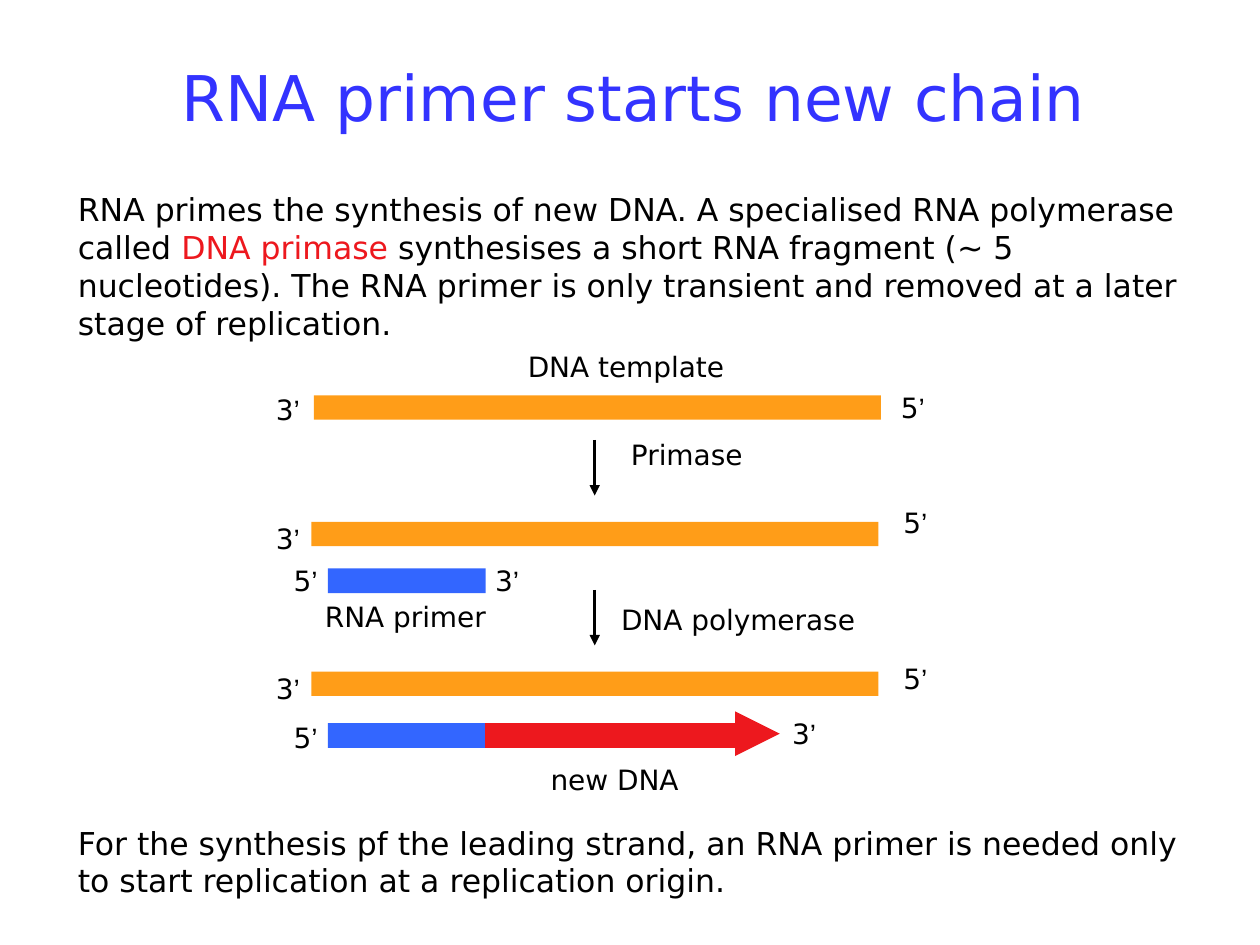
from dataclasses import dataclass

from lxml import etree
from pptx import Presentation
from pptx.dml.color import RGBColor
from pptx.enum.shapes import MSO_CONNECTOR, MSO_SHAPE
from pptx.enum.text import MSO_ANCHOR, MSO_AUTO_SIZE, PP_ALIGN
from pptx.oxml.ns import qn
from pptx.util import Cm, Pt

LINE = MSO_CONNECTOR.STRAIGHT
RECT = MSO_SHAPE.RECTANGLE
TOP, MID = MSO_ANCHOR.TOP, MSO_ANCHOR.MIDDLE
LEFT, CENTER = PP_ALIGN.LEFT, PP_ALIGN.CENTER
FIT, FIXED = MSO_AUTO_SIZE.SHAPE_TO_FIT_TEXT, MSO_AUTO_SIZE.NONE


@dataclass(frozen=True)
class Theme:
    """Colours, fonts and type sizes of the slide."""
    ink: str = "000000"
    title: str = "3333FF"
    dna: str = "FF9D18"
    rna: str = "3366FF"
    new: str = "ED181E"
    font: str = "DejaVu Sans"
    mark: str = "Arial"
    head: int = 36
    body: int = 18
    label: int = 16


THEME = Theme()


def add_text(shapes, box, *runs, size=THEME.label, color=THEME.ink,
             align=LEFT, anchor=TOP, wrap=False, fit=FIT):
    """Add a text box; a run is a string or a (string, format) pair."""
    frame = shapes.add_textbox(*map(Cm, box)).text_frame
    frame.word_wrap = wrap
    frame.auto_size = fit
    frame.vertical_anchor = anchor
    para = frame.paragraphs[0]
    para.alignment = align
    for item in runs:
        words, form = (item, {}) if isinstance(item, str) else item
        run = para.add_run()
        run.text = words
        run.font.size = Pt(size)
        run.font.name = form.get("font", THEME.font)
        run.font.color.rgb = RGBColor.from_string(form.get("color", color))


def add_bar(shapes, box, color):
    """Add a plain strand of one colour."""
    bar = shapes.add_shape(RECT, *map(Cm, box))
    bar.shadow.inherit = False
    bar.fill.solid()
    bar.fill.fore_color.rgb = RGBColor.from_string(color)
    bar.line.fill.background()


def add_arrow(shapes, start, end, color=THEME.ink, width=1.5):
    """Add a line with a triangle at its end."""
    arrow = shapes.add_connector(LINE, *map(Cm, start + end))
    arrow.line.color.rgb = RGBColor.from_string(color)
    arrow.line.width = Pt(width)
    etree.SubElement(arrow.line._get_or_add_ln(), qn("a:tailEnd"), type="triangle")
    etree.SubElement(arrow._element.spPr, qn("a:effectLst"))


def add_ends(shapes, x, y, ends):
    """Mark strand ends given as (digit, x, y) offsets."""
    for digit, dx, dy in ends:
        add_text(shapes, (x + dx, y + dy, 1.02, 0.94),
                 digit, ("’", {"font": THEME.mark}))


def add_step(shapes, x, y, name, width, dx, dy):
    """Add the enzyme arrow and its name."""
    add_arrow(shapes, (x + 6.68, y), (x + 6.68, y + 1.12))
    add_text(shapes, (x + dx, y + dy, width, 0.94), name)


def draw_strand(shapes, x, y):
    """Draw the bare DNA template."""
    add_bar(shapes, (x + 1.02, y + 1.04, 11.43, 0.49), THEME.dna)
    add_ends(shapes, x, y, [("3", 0, 0.86), ("5", 12.6, 0.81)])
    add_text(shapes, (x + 5.08, y, 4.47, 0.94), "DNA template")


def draw_prime(shapes, x, y):
    """Draw the template with its RNA primer."""
    add_step(shapes, x, y + 0.18, "Primase", 2.77, 7.16, -0.18)
    add_bar(shapes, (x + 0.97, y + 1.83, 11.43, 0.49), THEME.dna)
    add_bar(shapes, (x + 1.3, y + 2.77, 3.18, 0.5), THEME.rna)
    add_text(shapes, (x + 0.99, y + 3.28, 3.78, 0.94), "RNA primer")
    add_ends(shapes, x, y, [("3", 0, 1.7), ("3", 4.42, 2.54),
                            ("5", 12.65, 1.37), ("5", 0.36, 2.54)])


def draw_grow(shapes, x, y):
    """Draw the primer as it is extended by new DNA."""
    add_step(shapes, x, y, "DNA polymerase", 5.23, 6.96, 0.13)
    add_bar(shapes, (x + 0.97, y + 1.65, 11.43, 0.49), THEME.dna)
    add_bar(shapes, (x + 1.3, y + 2.69, 3.18, 0.5), THEME.rna)
    add_bar(shapes, (x + 4.47, y + 2.69, 5.18, 0.5), THEME.new)
    add_arrow(shapes, (x + 8.92, y + 2.9), (x + 10.41, y + 2.9), THEME.new, 8.5)
    add_ends(shapes, x, y, [("3", 0, 1.52), ("3", 10.41, 2.44),
                            ("5", 12.65, 1.32), ("5", 0.36, 2.51)])
    add_text(shapes, (x + 5.54, y + 3.35, 3.1, 0.94), "new DNA")


def draw_title(shapes, box):
    """Place the slide title."""
    add_text(shapes, box, "RNA primer starts new chain", size=THEME.head,
             color=THEME.title, align=CENTER, anchor=MID, wrap=True, fit=FIXED)


def draw_body(shapes, box, *runs):
    """Place a paragraph of body text."""
    add_text(shapes, box, *runs, size=THEME.body, wrap=True)


def main():
    """Build and save the slide."""
    deck = Presentation()
    deck.slide_width, deck.slide_height = Cm(25.4), Cm(19.05)
    shapes = deck.slides.add_slide(deck.slide_layouts[6]).shapes
    draw_title(shapes, (1.98, 0.36, 21.59, 3.18))
    draw_body(shapes, (1.32, 3.71, 23.04, 3.3),
              "RNA primes the synthesis of new DNA. A specialised RNA polymerase called ",
              ("DNA primase", {"color": THEME.new}),
              " synthesises a short RNA fragment (~ 5 nucleotides). The RNA primer is "
              "only transient and removed at a later stage of replication.")
    for draw, y in ((draw_strand, 6.93), (draw_prime, 8.69), (draw_grow, 11.89)):
        draw(shapes.add_group_shape().shapes, 5.31, y)
    draw_body(shapes, (1.32, 16.48, 23.34, 1.78),
              "For the synthesis pf the leading strand, an RNA primer is needed only "
              "to start replication at a replication origin.")
    deck.save("out.pptx")


if __name__ == "__main__":
    main()
